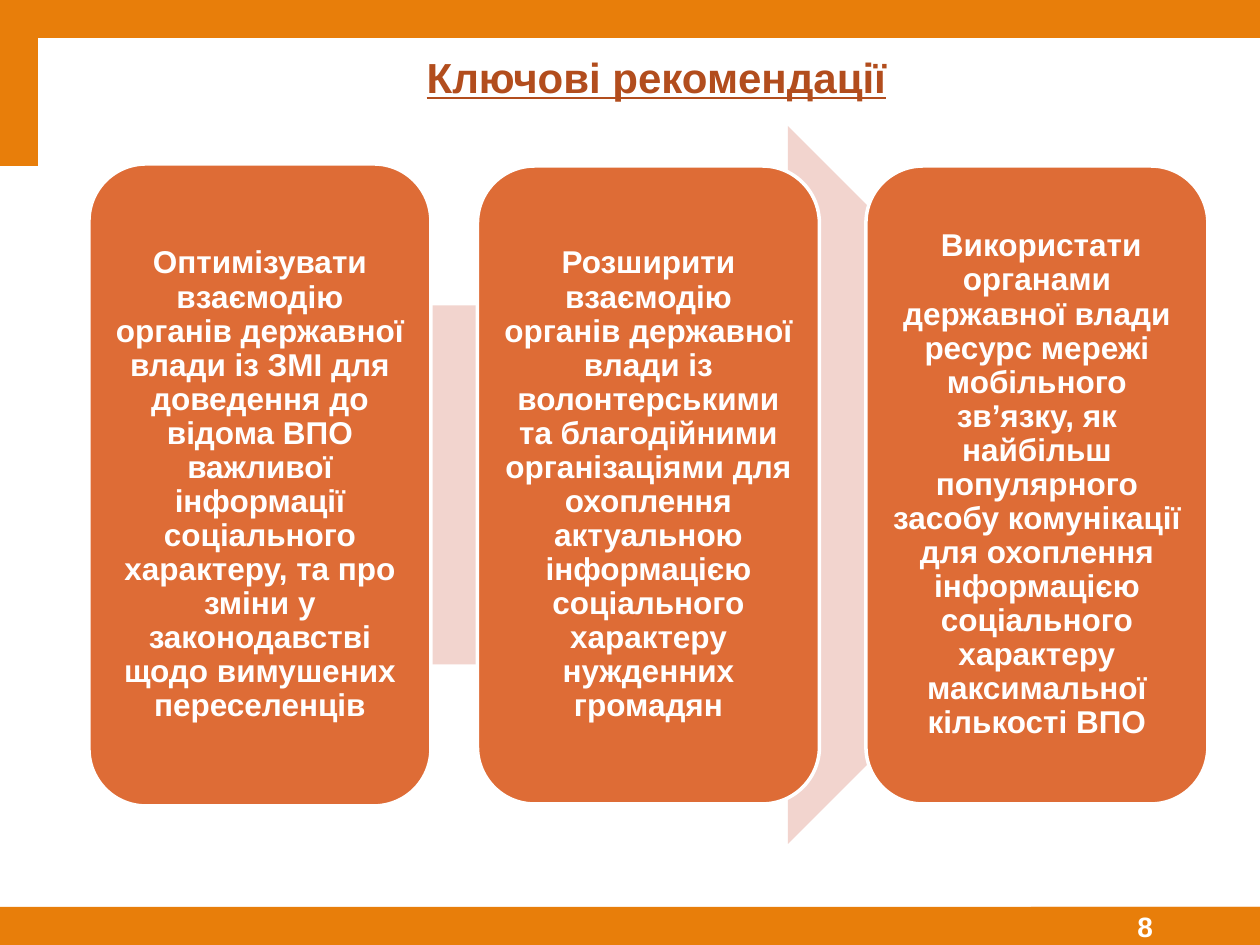
from pptx import Presentation
from pptx.dml.color import RGBColor
from pptx.enum.shapes import MSO_SHAPE
from pptx.enum.text import MSO_ANCHOR, PP_ALIGN
from pptx.util import Emu, Pt

PX = 914400 / 126
W, H = 1260, 945
BAR = 38
FONT = "Arial"
ORANGE, CARD, ARROW, TITLE, WHITE = "E87E0A", "DE6C36", "F2D4CE", "B24D1D", "FFFFFF"

CARDS = [
    "Оптимізувати взаємодію органів державної влади із ЗМІ для доведення "
    "до відома ВПО важливої інформації соціального характеру, та про зміни "
    "у законодавстві щодо вимушених переселенців",
    "Розширити взаємодію органів державної влади із волонтерськими та "
    "благодійними організаціями для охоплення актуальною інформацією "
    "соціального характеру нужденних громадян",
    " Використати органами державної влади ресурс мережі мобільного зв’язку, "
    "як найбільш популярного засобу комунікації для охоплення інформацією "
    "соціального характеру максимальної кількості ВПО",
]


def px(n):
    return Emu(round(n * PX))


def rgb(color):
    return RGBColor.from_string(color)


def add_shape(s, kind, box, fill, line=None):
    sp = s.shapes.add_shape(kind, *map(px, box))
    sp.shadow.inherit = False
    sp.fill.solid()
    sp.fill.fore_color.rgb = rgb(fill)
    if line:
        sp.line.color.rgb = rgb(line)
        sp.line.width = Pt(2)
    else:
        sp.line.fill.background()
    return sp


def write(sp, text, size, color, align, insets):
    """Fill a shape with one bold paragraph; insets are left, top, right, bottom."""
    tf = sp.text_frame
    tf.word_wrap = True
    tf.vertical_anchor = MSO_ANCHOR.MIDDLE
    tf.margin_left, tf.margin_top, tf.margin_right, tf.margin_bottom = map(px, insets)
    p = tf.paragraphs[0]
    p.text = text
    p.alignment = align
    p.font.name = FONT
    p.font.size = Pt(size)
    p.font.bold = True
    p.font.color.rgb = rgb(color)
    return p


def add_frame(s, width, height, number):
    """Bars along the top, left corner and bottom, with the slide number."""
    bottom = height - BAR
    for box in [
        (0, bottom, width, BAR),
        (0, 0, width, BAR),
        (0, BAR, BAR, 128),
    ]:
        add_shape(s, MSO_SHAPE.RECTANGLE, box, ORANGE)
    number_box = add_shape(s, MSO_SHAPE.RECTANGLE, (width - 229, bottom, 229, BAR), ORANGE)
    write(number_box, number, 16, WHITE, PP_ALIGN.RIGHT, (13, 0, 107, 0))


def add_title(s, box, text):
    sp = s.shapes.add_textbox(*map(px, box))
    p = write(sp, text, 24, TITLE, PP_ALIGN.CENTER, (28, 6, 13, 6))
    p.font.underline = True


def add_process(s, left, top, width, height):
    """An arrow behind a row of equally spaced cards."""
    add_shape(s, MSO_SHAPE.RIGHT_ARROW, (left + 63, top, width - 124, height), ARROW)
    card_w = 342
    step = (width - card_w) / (len(CARDS) - 1)
    for i, text in enumerate(CARDS):
        margin = 38 if i == 0 else 40
        box = (left + i * step, top + margin, card_w, height - 2 * margin)
        card = add_shape(s, MSO_SHAPE.ROUNDED_RECTANGLE, box, CARD, WHITE)
        p = write(card, text, 18, WHITE, PP_ALIGN.CENTER, (9, 9, 9, 9))
        p.line_spacing = 0.9


def main():
    prs = Presentation()
    prs.slide_width, prs.slide_height = px(W), px(H)
    s = prs.slides.add_slide(prs.slide_layouts[6])
    add_frame(s, W, H, "8")
    add_title(s, (BAR, BAR, W - BAR, 78), "Ключові рекомендації")
    add_process(s, 89, 126, 1119, 718)
    prs.save("out.pptx")


if __name__ == "__main__":
    main()
